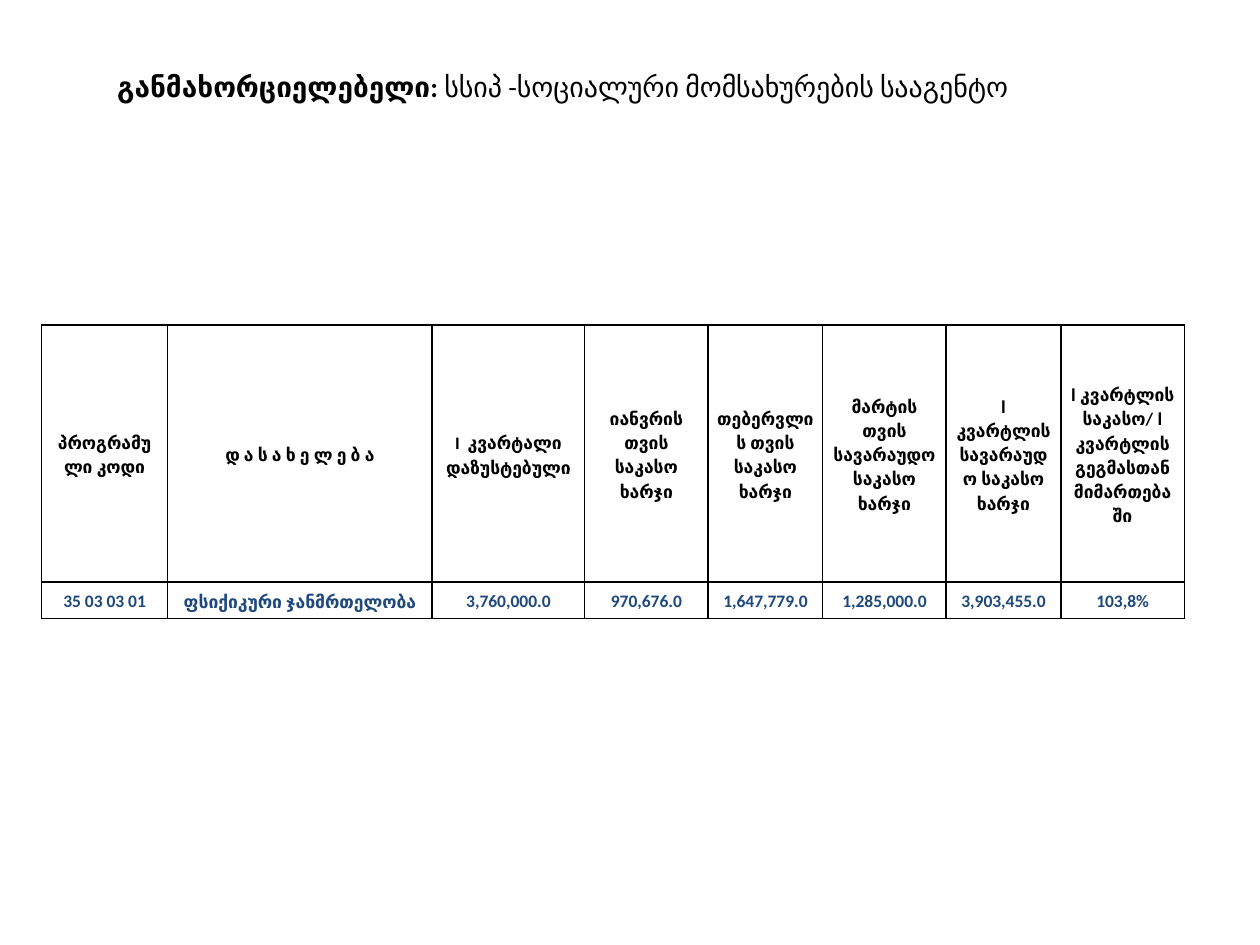
from lxml.etree import SubElement
from pptx import Presentation
from pptx.dml.color import RGBColor
from pptx.enum.text import MSO_ANCHOR, MSO_AUTO_SIZE, PP_ALIGN
from pptx.oxml.ns import qn
from pptx.util import Inches, Pt

COLORS = {"ink": "000000", "figures": "1F497D", "paper": "FFFFFF"}
LATIN, GEORGIAN = "Calibri", "Lato"

HEADING = [("განმახორციელებელი:", LATIN, True),
           (" სსიპ -სოციალური მომსახურების სააგენტო", LATIN, False)]

COLUMNS = [
    (1, [("პროგრამული კოდი", GEORGIAN)], [("35 03 03 01", LATIN)]),
    (2.1, [("დ ა ს ა ხ ე ლ ე ბ ა", GEORGIAN)], [("ფსიქიკური ჯანმრთელობა", GEORGIAN)]),
    (1.21, [("I  ", LATIN), ("კვარტალი დაზუსტებული", GEORGIAN)], [("3,760,000.0", LATIN)]),
    (0.98, [("იანვრის თვის საკასო ხარჯი", GEORGIAN)], [("970,676.0", LATIN)]),
    (0.91, [("თებერვლის თვის საკასო ხარჯი", GEORGIAN)], [("1,647,779.0", LATIN)]),
    (0.98, [("მარტის თვის სავარაუდო საკასო ხარჯი", GEORGIAN)], [("1,285,000.0", LATIN)]),
    (0.91, [("I კვარტლის სავარაუდო საკასო ხარჯი", GEORGIAN)], [("3,903,455.0", LATIN)]),
    (0.98, [("I კვარტლის საკასო", GEORGIAN), ("/", LATIN),
            (" I კვარტლის გეგმასთან მიმართებაში", GEORGIAN)], [("103,8%", LATIN)]),
]
ROW_HEIGHTS = [2.04, 0.29]
ROW_COLORS = ["ink", "figures"]


def write(frame, runs, size, color="ink", align=PP_ALIGN.LEFT, spacing=1.0):
    paragraph = frame.paragraphs[0]
    paragraph.alignment = align
    paragraph.line_spacing = spacing
    for text, font, *bold in runs:
        run = paragraph.add_run()
        run.text = text
        run.font.name = font
        run.font.size = Pt(size)
        run.font.bold = bold[0] if bold else True
        run.font.color.rgb = RGBColor.from_string(COLORS[color])


def add_borders(cell):
    properties = cell._tc.get_or_add_tcPr()
    for position, side in enumerate(("a:lnL", "a:lnR", "a:lnT", "a:lnB")):
        border = SubElement(properties, qn(side), w=str(Pt(1)))
        fill = SubElement(border, qn("a:solidFill"))
        SubElement(fill, qn("a:srgbClr"), val=COLORS["ink"])
        properties.insert(position, border)


def add_heading(slide):
    heading = slide.shapes.title
    heading.left, heading.top = Inches(0.83), Inches(0.5)
    heading.width, heading.height = Inches(7.5), Inches(0.37)
    frame = heading.text_frame
    frame.word_wrap = True
    frame.auto_size = MSO_AUTO_SIZE.SHAPE_TO_FIT_TEXT
    frame.vertical_anchor = MSO_ANCHOR.TOP
    write(frame, HEADING, 16)


def add_budget(slide):
    widths = [column[0] for column in COLUMNS]
    budget = slide.shapes.add_table(
        len(ROW_HEIGHTS), len(COLUMNS), Inches(0.33), Inches(2.58),
        Inches(sum(widths)), Inches(sum(ROW_HEIGHTS))).table
    budget.horz_banding = False
    for row, height in zip(budget.rows, ROW_HEIGHTS):
        row.height = Inches(height)
    for c, (width, *entries) in enumerate(COLUMNS):
        budget.columns[c].width = Inches(width)
        for r, runs in enumerate(entries):
            cell = budget.cell(r, c)
            cell.fill.solid()
            cell.fill.fore_color.rgb = RGBColor.from_string(COLORS["paper"])
            cell.vertical_anchor = MSO_ANCHOR.MIDDLE
            cell.margin_left = cell.margin_right = Inches(0.07)
            cell.margin_top = cell.margin_bottom = 0
            write(cell.text_frame, runs, 10, color=ROW_COLORS[r],
                  align=PP_ALIGN.CENTER, spacing=1.15)
            add_borders(cell)


def main():
    deck = Presentation()
    deck.slide_width, deck.slide_height = Inches(10), Inches(7.5)
    slide = deck.slides.add_slide(deck.slide_layouts[5])
    add_heading(slide)
    add_budget(slide)
    deck.save("out.pptx")


if __name__ == "__main__":
    main()
